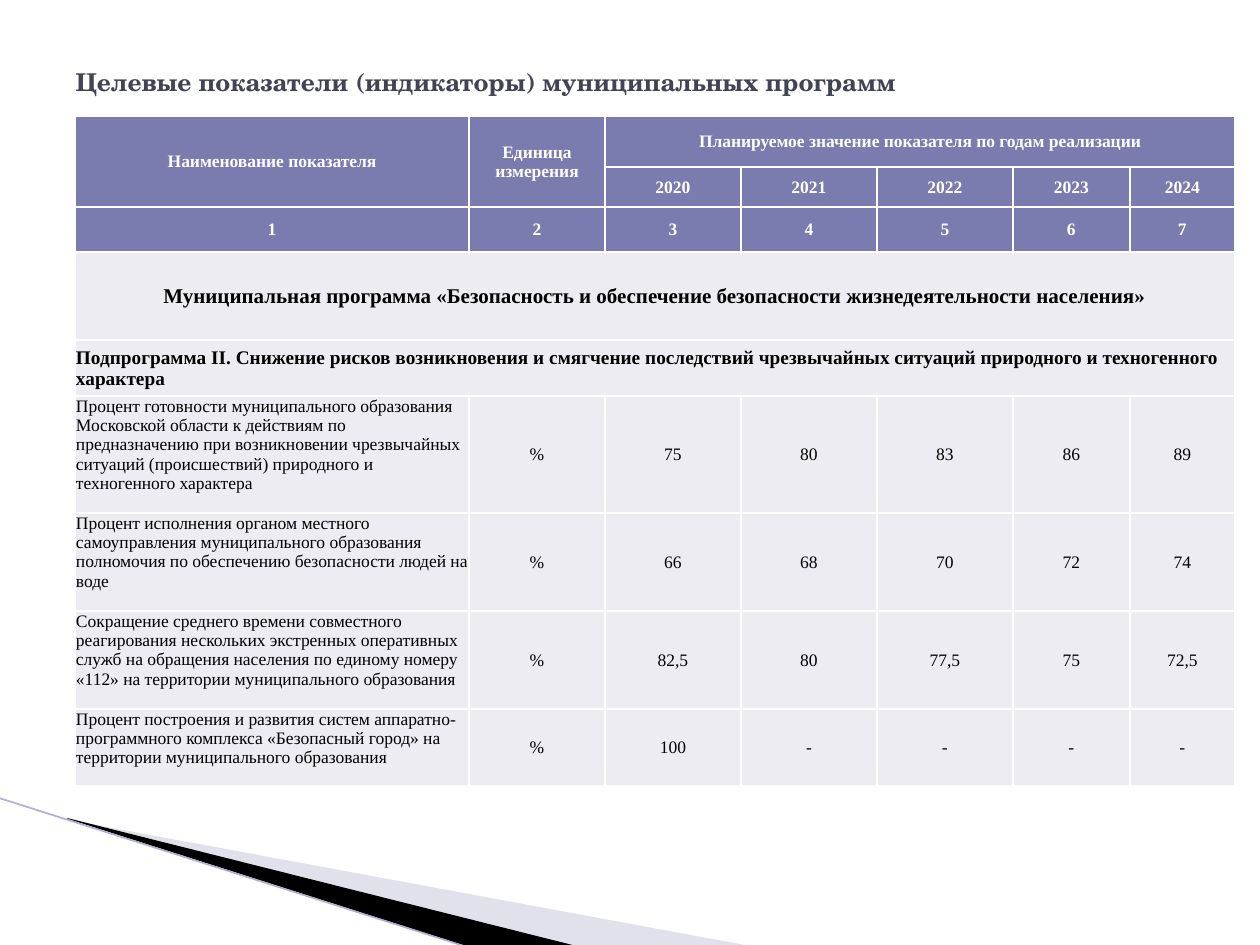
from lxml import etree
from pptx import Presentation, util as u
from pptx.dml.color import RGBColor
from pptx.enum import shapes, text
from pptx.oxml.ns import qn

WHITE = RGBColor(0xFF, 0xFF, 0xFF)
BLACK = RGBColor(0, 0, 0)
TITLE_INK = RGBColor(0x42, 0x44, 0x56)
HEADER_FILL = RGBColor(0x7A, 0x7B, 0xAE)
BODY_FILL = RGBColor(0xEC, 0xEC, 0xF2)
WEDGE_FILL = RGBColor(0xB6, 0xB6, 0xD1)
EDGE_LINE = RGBColor(0xAF, 0xB0, 0xCC)

SCALE = 914400 / 126  # EMU in one px
LEFT, CENTER = text.PP_ALIGN.LEFT, text.PP_ALIGN.CENTER
TOP, MIDDLE = text.MSO_ANCHOR.TOP, text.MSO_ANCHOR.MIDDLE

HEADER = dict(name="Times New Roman", size=u.Pt(10), bold=True)
PROGRAM = dict(HEADER, size=u.Pt(12))
SUBPROGRAM = dict(HEADER, size=u.Pt(11))
BODY = dict(HEADER, bold=False)
TITLE = dict(name="TeX Gyre Schola", size=u.Pt(14), bold=True)

COLUMNS = [394, 136, 136, 136, 136, 117, 105]
HEIGHTS = [51, 40, 45, 88, 56, 117, 98, 98, 77]
ROWS = [
    ["Наименование показателя", "Единица измерения",
     "Планируемое значение показателя по годам реализации"],
    ["", "", "2020", "2021", "2022", "2023", "2024"],
    ["1", "2", "3", "4", "5", "6", "7"],
    ["Муниципальная программа «Безопасность и обеспечение безопасности "
     "жизнедеятельности населения»"],
    ["Подпрограмма II. Снижение рисков возникновения и смягчение последствий "
     "чрезвычайных ситуаций природного и техногенного характера"],
    ["Процент готовности муниципального образования Московской области к "
     "действиям по предназначению при возникновении чрезвычайных ситуаций "
     "(происшествий) природного и техногенного характера",
     "%", "75", "80", "83", "86", "89"],
    ["Процент исполнения органом местного самоуправления муниципального "
     "образования полномочия по обеспечению безопасности людей на воде",
     "%", "66", "68", "70", "72", "74"],
    ["Сокращение среднего времени совместного реагирования нескольких "
     "экстренных оперативных служб на обращения населения по единому номеру "
     "«112» на территории муниципального образования",
     "%", "82,5", "80", "77,5", "75", "72,5"],
    ["Процент построения и развития систем аппаратно-программного комплекса "
     "«Безопасный город» на территории муниципального образования",
     "%", "100", "-", "-", "-", "-"],
]
# First and last cell of each merged area, as (row, column)
MERGES = [((0, 0), (1, 0)), ((0, 1), (1, 1)), ((0, 2), (0, 6)),
          ((3, 0), (3, 6)), ((4, 0), (4, 6))]


def px(value):
    return u.Emu(round(value * SCALE))


def cell_style(row, column):
    """Return fill, text colour, font format, alignment and anchor."""
    if row < 3:
        return HEADER_FILL, WHITE, HEADER, CENTER, MIDDLE
    if row == 3:
        return BODY_FILL, BLACK, PROGRAM, CENTER, MIDDLE
    if row == 4:
        return BODY_FILL, BLACK, SUBPROGRAM, LEFT, MIDDLE
    if column == 0:
        return BODY_FILL, BLACK, BODY, LEFT, TOP
    return BODY_FILL, BLACK, BODY, CENTER, MIDDLE


class SlideBuilder:
    def __init__(self, slide):
        self.slide = slide

    def add_words(self, frame, words, style, color, align):
        paragraph = frame.paragraphs[0]
        paragraph.alignment = align
        run = paragraph.add_run()
        run.text = words
        for key, value in style.items():
            setattr(run.font, key, value)
        run.font.color.rgb = color

    def title(self, words, left, top, width, height):
        title = self.slide.shapes.title
        title.left, title.top = px(left), px(top)
        title.width, title.height = px(width), px(height)
        title.text_frame.vertical_anchor = MIDDLE
        self.add_words(title.text_frame, words, TITLE, TITLE_INK, LEFT)

    def wedge(self, points, color, alpha=None):
        builder = self.slide.shapes.build_freeform(*points[0], scale=SCALE)
        builder.add_line_segments(points[1:], close=True)
        wedge = builder.convert_to_shape()
        wedge.shadow.inherit = False
        wedge.fill.solid()
        wedge.fill.fore_color.rgb = color
        wedge.line.fill.background()
        if alpha:
            tint = wedge._element.spPr.find(".//" + qn("a:srgbClr"))
            etree.SubElement(tint, qn("a:alpha"), val=str(alpha * 1000))

    def line(self, start, end, color, width):
        line = self.slide.shapes.add_connector(
            shapes.MSO_CONNECTOR.STRAIGHT, *map(px, start + end))
        line.line.color.rgb = color
        line.line.width = u.Pt(width)
        etree.SubElement(line._element.spPr, qn("a:effectLst"))

    def borders(self, cell, color, width):
        properties = cell._tc.get_or_add_tcPr()
        for side in ("a:lnL", "a:lnR", "a:lnT", "a:lnB"):
            border = etree.SubElement(properties, qn(side), w=str(u.Pt(width)))
            fill = etree.SubElement(border, qn("a:solidFill"))
            etree.SubElement(fill, qn("a:srgbClr"), val=str(color))

    def table(self, left, top):
        table = self.slide.shapes.add_table(
            len(HEIGHTS), len(COLUMNS), px(left), px(top),
            px(sum(COLUMNS)), px(sum(HEIGHTS))).table
        for column, width in zip(table.columns, COLUMNS):
            column.width = px(width)
        for row, height in zip(table.rows, HEIGHTS):
            row.height = px(height)
        for first, last in MERGES:
            table.cell(*first).merge(table.cell(*last))
        for r, words in enumerate(ROWS):
            for c in range(len(COLUMNS)):
                cell = table.cell(r, c)
                fill, color, style, align, anchor = cell_style(r, c)
                self.borders(cell, WHITE, 1)
                cell.fill.solid()
                cell.fill.fore_color.rgb = fill
                cell.vertical_anchor = anchor
                cell.margin_left = cell.margin_right = cell.margin_top = px(1)
                cell.margin_bottom = 0
                if c < len(words) and words[c]:
                    self.add_words(cell.text_frame, words[c], style, color, align)


def main():
    deck = Presentation()
    deck.slide_width, deck.slide_height = px(1260), px(945)
    page = SlideBuilder(deck.slides.add_slide(deck.slide_layouts[5]))

    # Corner decoration
    page.wedge([(69, 820), (750, 946), (575, 946), (69, 819)], WEDGE_FILL, 40)
    page.wedge([(67, 818), (576, 946), (469, 947), (68, 819)], BLACK)
    page.line((-1, 798), (467, 947), EDGE_LINE, 0.95)

    # Title and indicators by year
    page.title("Целевые показатели (индикаторы) муниципальных программ",
               63, 38, 1134, 87)
    page.table(75, 116)

    deck.save("out.pptx")


if __name__ == "__main__":
    main()
